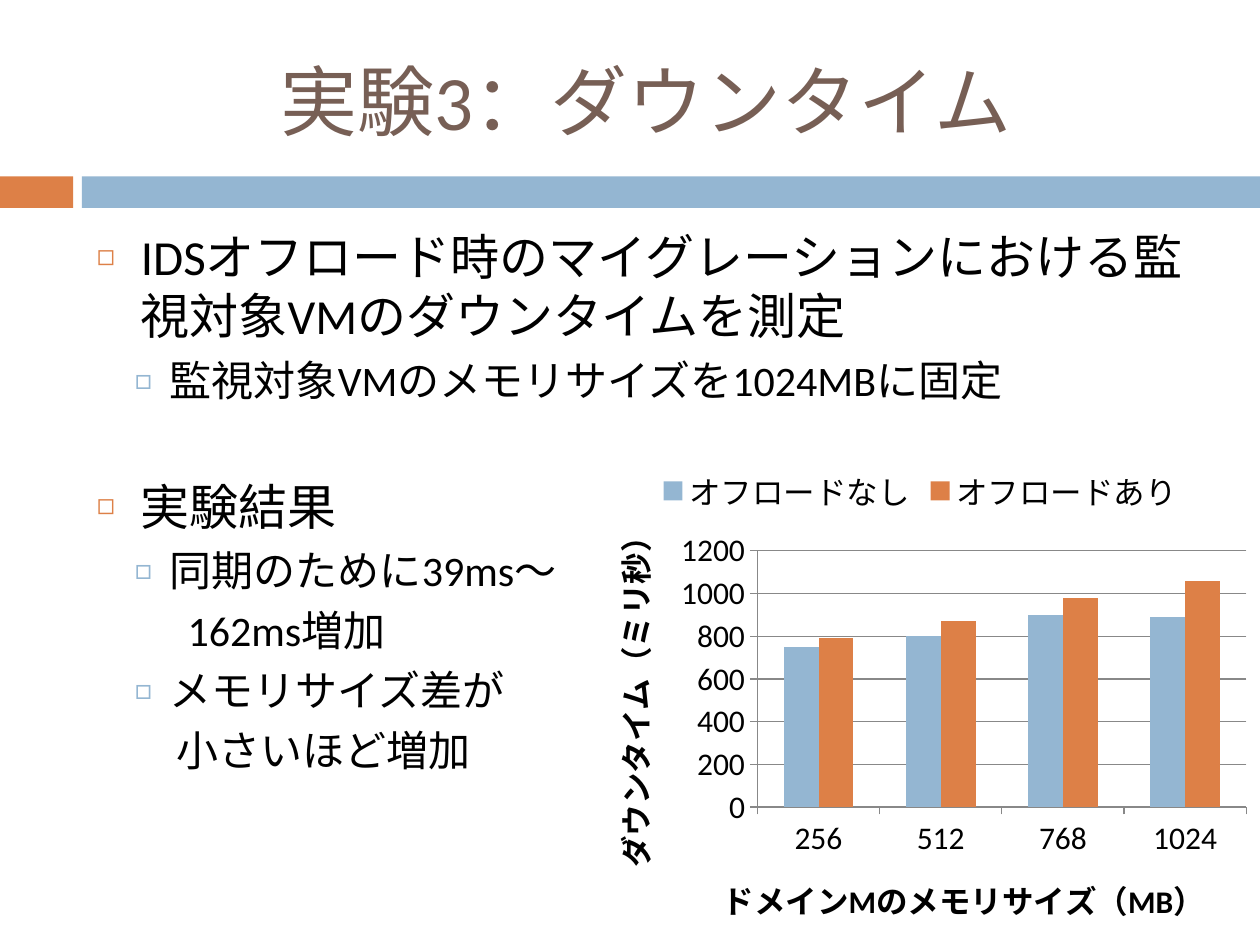
from lxml import etree
from pptx import Presentation
from pptx.chart.data import CategoryChartData
from pptx.dml.color import RGBColor
from pptx.enum.chart import XL_CHART_TYPE, XL_LEGEND_POSITION, XL_TICK_MARK
from pptx.enum.shapes import MSO_SHAPE
from pptx.enum.text import MSO_ANCHOR, PP_ALIGN
from pptx.oxml import parse_xml
from pptx.oxml.ns import nsdecls, qn
from pptx.util import Inches, Pt

RECTANGLE = MSO_SHAPE.RECTANGLE
COLUMNS = XL_CHART_TYPE.COLUMN_CLUSTERED
LEGEND_TOP = XL_LEGEND_POSITION.TOP
TICK_OUT = XL_TICK_MARK.OUTSIDE
FONT = "Calibri"
COLORS = {"orange": "DD8047", "blue": "94B6D2", "title": "775F55",
          "text": "000000", "grid": "888888", "white": "FFFFFF"}


def color(name):
    return RGBColor.from_string(COLORS[name])


def style_font(font, size, color_name="text", bold=False):
    font.name = FONT
    font.size = Pt(size)
    font.bold = bold
    font.color.rgb = color(color_name)


deck = Presentation()
deck.slide_width, deck.slide_height = Inches(10), Inches(7.5)
page = deck.slides.add_slide(deck.slide_layouts[5])

# Band under the title
for left, width, fill in [(0, 0.58, "orange"), (0.65, 9.35, "blue")]:
    band = page.shapes.add_shape(RECTANGLE, Inches(left), Inches(1.4),
                                 Inches(width), Inches(0.25))
    band.shadow.inherit = False
    band.fill.solid()
    band.fill.fore_color.rgb = color(fill)
    band.line.fill.background()

# Title
title = page.shapes.title
title.left, title.top = Inches(0.67), Inches(0.25)
title.width, title.height = Inches(8.92), Inches(1.08)
title.text_frame.vertical_anchor = MSO_ANCHOR.MIDDLE
para = title.text_frame.paragraphs[0]
para.alignment = PP_ALIGN.CENTER
span = para.add_run()
span.text = "実験3：ダウンタイム"
style_font(span.font, 44, "title")

# Body: level style = size, left margin, hanging indent, bullet, colour, bullet %
LEVELS = {
    "main": (28, 0.35, -0.35, "◻", "orange", 60),
    "sub": (24, 0.58, -0.28, "□", "blue", 70),
    "latin line": (24, 0.72, 0, None, None, None),
    "kana line": (24, 0.63, 0, None, None, None),
}
# level, space before in points, text
BODY = [
    ("main", 7, "IDSオフロード時のマイグレーションにおける監視対象VMのダウンタイムを測定"),
    ("sub", 5.5, "監視対象VMのメモリサイズを1024MBに固定"),
    ("main", 41, "実験結果"),
    ("sub", 5.5, "同期のために39ms～"),
    ("latin line", 5.5, "162ms増加"),
    ("sub", 5.5, "メモリサイズ差が"),
    ("kana line", 5.5, "小さいほど増加"),
]
body = page.shapes.add_textbox(Inches(0.67), Inches(1.75), Inches(8.92), Inches(4.92))
frame = body.text_frame
frame.word_wrap = True
for index, (level, before, text) in enumerate(BODY):
    size, margin, indent, bullet, bullet_color, percent = LEVELS[level]
    para = frame.paragraphs[0] if index == 0 else frame.add_paragraph()
    para.space_before = Pt(before)
    span = para.add_run()
    span.text = text
    style_font(span.font, size)
    props = para._p.get_or_add_pPr()
    props.set("marL", str(Inches(margin)))
    props.set("indent", str(Inches(indent)))
    if bullet:
        tint = etree.SubElement(props, qn("a:buClr"))
        etree.SubElement(tint, qn("a:srgbClr"), val=COLORS[bullet_color])
        etree.SubElement(props, qn("a:buSzPct"), val=str(percent * 1000))
        etree.SubElement(props, qn("a:buFont"), typeface=FONT)
        etree.SubElement(props, qn("a:buChar"), char=bullet)

# Downtime chart
data = CategoryChartData()
data.categories = ["256", "512", "768", "1024"]
data.add_series("オフロードなし", [750, 800, 900, 890])
data.add_series("オフロードあり", [790, 870, 980, 1060])
chart = page.shapes.add_chart(COLUMNS, Inches(4.61), Inches(3.59),
                              Inches(5.39), Inches(3.91), data).chart
style_font(chart.font, 18)
chart.has_title = False
chart.has_legend = True
chart.legend.position = LEGEND_TOP
chart.legend.include_in_layout = False

plot = chart.plots[0]
plot.gap_width = 150
plot.overlap = 0
plot.vary_by_categories = False
for series, fill in zip(plot.series, ["blue", "orange"]):
    series.format.fill.solid()
    series.format.fill.fore_color.rgb = color(fill)

value_axis = chart.value_axis
value_axis.minimum_scale, value_axis.maximum_scale = 0, 1200
value_axis.major_unit = 200
value_axis.major_gridlines.format.line.color.rgb = color("grid")
for axis, caption in [(chart.category_axis, "ドメインMのメモリサイズ（MB）"),
                      (value_axis, "ダウンタイム（ミリ秒）")]:
    axis.major_tick_mark = TICK_OUT
    axis.format.line.color.rgb = color("grid")
    span = axis.axis_title.text_frame.paragraphs[0].add_run()
    span.text = caption
    style_font(span.font, 18, bold=True)

# Inner plot area as fractions of the chart
layout = parse_xml(
    f'<c:layout {nsdecls("c")}><c:manualLayout><c:layoutTarget val="inner"/>'
    '<c:xMode val="edge"/><c:yMode val="edge"/><c:x val="0.26"/><c:y val="0.2"/>'
    '<c:w val="0.72"/><c:h val="0.52"/></c:manualLayout></c:layout>')
plot_area = chart._chartSpace.chart.plotArea
for old in plot_area.findall(qn("c:layout")):
    plot_area.remove(old)
plot_area.insert(0, layout)

deck.save("out.pptx")
